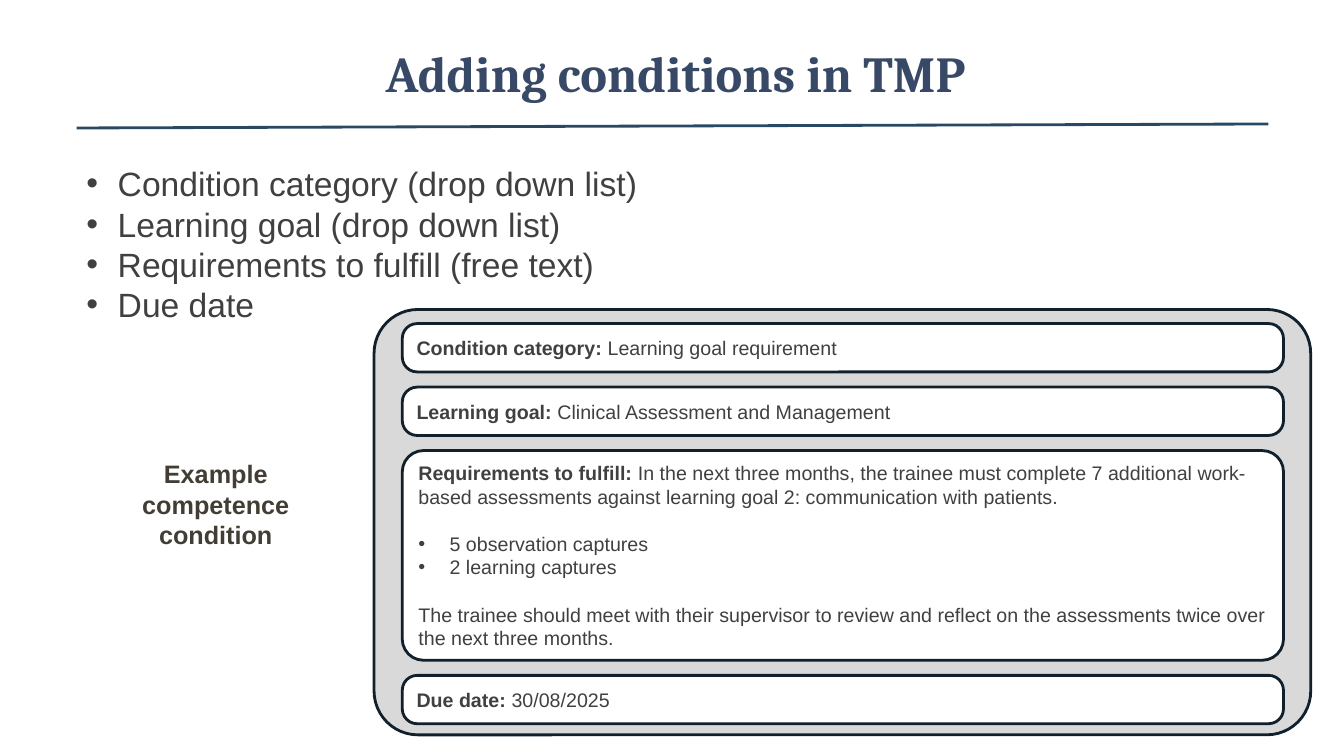
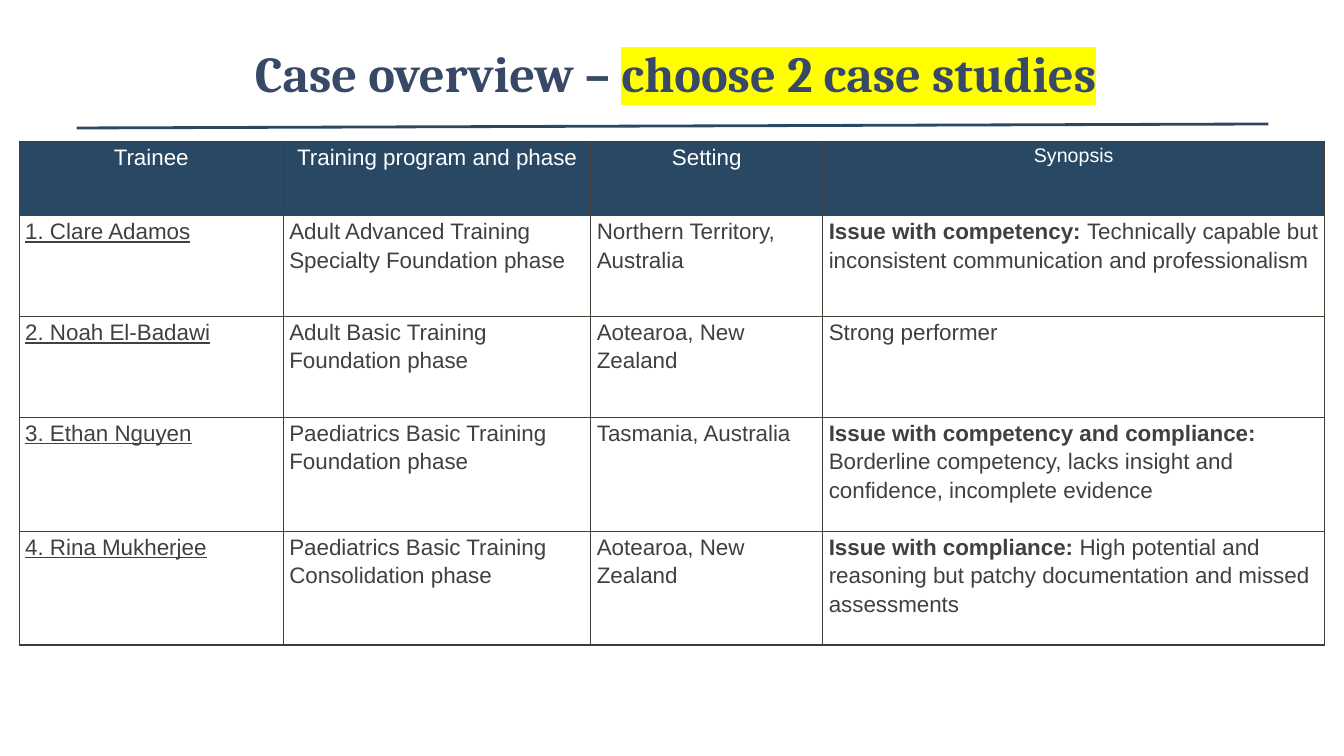
from lxml import etree
from pptx import Presentation
from pptx.dml.color import RGBColor
from pptx.enum.shapes import MSO_CONNECTOR, MSO_SHAPE
from pptx.enum.text import MSO_ANCHOR, PP_ALIGN
from pptx.oxml.ns import qn
from pptx.util import Inches, Pt

CENTER, LEFT = PP_ALIGN.CENTER, PP_ALIGN.LEFT
MIDDLE, TOP = MSO_ANCHOR.MIDDLE, MSO_ANCHOR.TOP
ROUND_RECT = MSO_SHAPE.ROUNDED_RECTANGLE
STRAIGHT = MSO_CONNECTOR.STRAIGHT
TITLE_ONLY = 5

# Shared style
NAVY, TITLE_BLUE, OUTLINE = "294864", "384967", "12202C"
TEXT, BROWN, GREY, WHITE, YELLOW = "404040", "433E35", "D9D9D9", "FFFFFF", "FFFF00"
BODY_FONT, TITLE_FONT = "Arial", "Cambria"
INDENT = 0.31

# Slide content
FIELDS = ["Condition category (drop down list)", "Learning goal (drop down list)",
          "Requirements to fulfill (free text)", "Due date"]
# Each form row: height, corner ratio, label, value
FORM_ROWS = [
    (0.48, 0.308, "Condition category: ", "Learning goal requirement"),
    (0.48, 0.308, "Learning goal: ", "Clinical Assessment and Management"),
    (2.08, 0.101, "Requirements to fulfill: ",
     "In the next three months, the trainee must complete 7 additional work-based "
     "assessments against learning goal 2: communication with patients."),
    (0.48, 0.308, "Due date: ", "30/08/2025"),
]
CAPTURES = ["5 observation captures", "2 learning captures"]
REVIEW = ("The trainee should meet with their supervisor to review and reflect on "
          "the assessments twice over the next three months.")

HEADERS = ["Trainee", "Training program and phase", "Setting", "Synopsis"]
# Each case: trainee, program and phase, setting, issue, synopsis
CASES = [
    ("1. Clare Adamos", "Adult Advanced Training Specialty Foundation phase",
     "Northern Territory, Australia", "Issue with competency: ",
     "Technically capable but inconsistent communication and professionalism"),
    ("2. Noah El-Badawi", "Adult Basic Training Foundation phase",
     "Aotearoa, New Zealand", "", "Strong performer"),
    ("3. Ethan Nguyen", "Paediatrics Basic Training Foundation phase",
     "Tasmania, Australia", "Issue with competency and compliance: ",
     "Borderline competency, lacks insight and confidence, incomplete evidence"),
    ("4. Rina Mukherjee", "Paediatrics Basic Training Consolidation phase",
     "Aotearoa, New Zealand", "Issue with compliance: ",
     "High potential and reasoning but patchy documentation and missed assessments"),
]
COL_WIDTHS = [2.62, 3.05, 2.3, 4.98]
ROW_HEIGHTS = [0.74, 1, 1, 1.13, 1.13]


def rgb(color):
    return RGBColor.from_string(color)


def box(left, top, width, height):
    return [Inches(v) for v in (left, top, width, height)]


# Text
def style(p, size, color=TEXT, bold=False, font=BODY_FONT, align=LEFT):
    p.alignment = align
    p.font.name, p.font.size, p.font.bold = font, Pt(size), bold
    p.font.color.rgb = rgb(color)


def add_run(p, text, bold=None):
    r = p.add_run()
    r.text = text
    r.font.bold = bold
    return r


def highlight(r, color):
    mark = etree.SubElement(r.font._element, qn("a:highlight"))
    etree.SubElement(mark, qn("a:srgbClr"), val=color)


def add_labelled(p, label, value, size):
    """Write a bold label followed by a plain value."""
    style(p, size)
    if label:
        add_run(p, label, bold=True)
    add_run(p, value)


def add_bullet(p, text, size):
    p_pr = p._p.get_or_add_pPr()
    p_pr.set("marL", str(Inches(INDENT)))
    p_pr.set("indent", str(-Inches(INDENT)))
    etree.SubElement(p_pr, qn("a:buFont"), typeface="Arial")
    etree.SubElement(p_pr, qn("a:buChar"), char="•")
    style(p, size)
    add_run(p, text)


def add_text_frame(slide, *place):
    tf = slide.shapes.add_textbox(*box(*place)).text_frame
    tf.word_wrap = True
    return tf


# Shapes
def add_panel(shapes, place, ratio, fill):
    sp = shapes.add_shape(ROUND_RECT, *box(*place))
    sp.adjustments[0] = ratio
    sp.shadow.inherit = False
    sp.fill.solid()
    sp.fill.fore_color.rgb = rgb(fill)
    sp.line.color.rgb = rgb(OUTLINE)
    sp.line.width = Pt(2)
    tf = sp.text_frame
    tf.word_wrap, tf.vertical_anchor = True, MIDDLE
    return tf


def add_titled_slide(prs, text, marked=""):
    """Add a slide with the shared title and rule; marked text is highlighted."""
    slide = prs.slides.add_slide(prs.slide_layouts[TITLE_ONLY])
    title = slide.shapes.title
    title.left, title.top, title.width, title.height = box(0.07, 0.32, 13.26, 0.79)
    title.text_frame.vertical_anchor = MIDDLE
    p = title.text_frame.paragraphs[0]
    style(p, 36, TITLE_BLUE, True, TITLE_FONT, CENTER)
    add_run(p, text)
    if marked:
        highlight(add_run(p, marked), YELLOW)

    rule = slide.shapes.add_connector(STRAIGHT, *box(0.76, 1.27, 12.58, 1.23))
    rule.line.color.rgb = rgb(NAVY)
    rule.line.width = Pt(2)
    etree.SubElement(rule._element.spPr, qn("a:effectLst"))
    return slide


# Table cells
def set_borders(cell, color):
    tc_pr = cell._tc.get_or_add_tcPr()
    for i, side in enumerate(("a:lnL", "a:lnR", "a:lnT", "a:lnB")):
        ln = etree.Element(qn(side), w=str(Pt(1)))
        fill = etree.SubElement(ln, qn("a:solidFill"))
        etree.SubElement(fill, qn("a:srgbClr"), val=color)
        tc_pr.insert(i, ln)


def format_cell(cell, fill):
    cell.margin_left = cell.margin_right = Inches(0.06)
    cell.margin_top = cell.margin_bottom = 0
    cell.vertical_anchor = TOP
    cell.fill.solid()
    cell.fill.fore_color.rgb = rgb(fill)
    set_borders(cell, BROWN)
    p = cell.text_frame.paragraphs[0]
    p.line_spacing = 1.15
    return p


# Slides
def add_form(slide):
    shapes = slide.shapes.add_group_shape().shapes
    add_panel(shapes, (3.71, 3.07, 9.29, 4.22), 0.103, GREY)
    top, gap, frames = 3.21, 0.15, []
    for height, ratio, label, value in FORM_ROWS:
        tf = add_panel(shapes, (3.99, top, 8.74, height), ratio, WHITE)
        add_labelled(tf.paragraphs[0], label, value, 14)
        frames.append(tf)
        top += height + gap

    requirements = frames[2]
    for i, text in enumerate(CAPTURES):
        p = requirements.add_paragraph()
        p.space_before = Pt(0 if i else 17)
        add_bullet(p, text, 14)
    p = requirements.add_paragraph()
    p.space_before = Pt(17)
    style(p, 14)
    add_run(p, REVIEW)


def conditions_slide(prs):
    slide = add_titled_slide(prs, "Adding conditions in TMP")
    tf = add_text_frame(slide, 0.76, 1.57, 11.74, 1.7)
    for i, text in enumerate(FIELDS):
        add_bullet(tf.add_paragraph() if i else tf.paragraphs[0], text, 24)

    p = add_text_frame(slide, 1.25, 4.5, 1.78, 1.01).paragraphs[0]
    style(p, 18, BROWN, True, align=CENTER)
    add_run(p, "Example competence condition")
    add_form(slide)


def cases_slide(prs):
    slide = add_titled_slide(prs, "Case overview – ", "choose 2 case studies")
    place = box(0.19, 1.4, sum(COL_WIDTHS), sum(ROW_HEIGHTS))
    table = slide.shapes.add_table(len(ROW_HEIGHTS), len(COL_WIDTHS), *place).table
    table.horz_banding = False
    for col, width in zip(table.columns, COL_WIDTHS):
        col.width = Inches(width)
    for row, height in zip(table.rows, ROW_HEIGHTS):
        row.height = Inches(height)

    for c, text in enumerate(HEADERS):
        p = format_cell(table.cell(0, c), NAVY)
        style(p, 14 if text == "Synopsis" else 16, WHITE, align=CENTER)
        add_run(p, text, bold=False)

    for r, (trainee, program, setting, issue, synopsis) in enumerate(CASES, 1):
        values = [("", trainee), ("", program), ("", setting), (issue, synopsis)]
        for c, (label, value) in enumerate(values):
            p = format_cell(table.cell(r, c), WHITE)
            add_labelled(p, label, value, 16)
            if c == 0:
                p.font.underline = True


def main():
    prs = Presentation()
    prs.slide_width, prs.slide_height = Inches(13.33), Inches(7.5)
    conditions_slide(prs)
    cases_slide(prs)
    prs.save("out.pptx")


if __name__ == "__main__":
    main()
